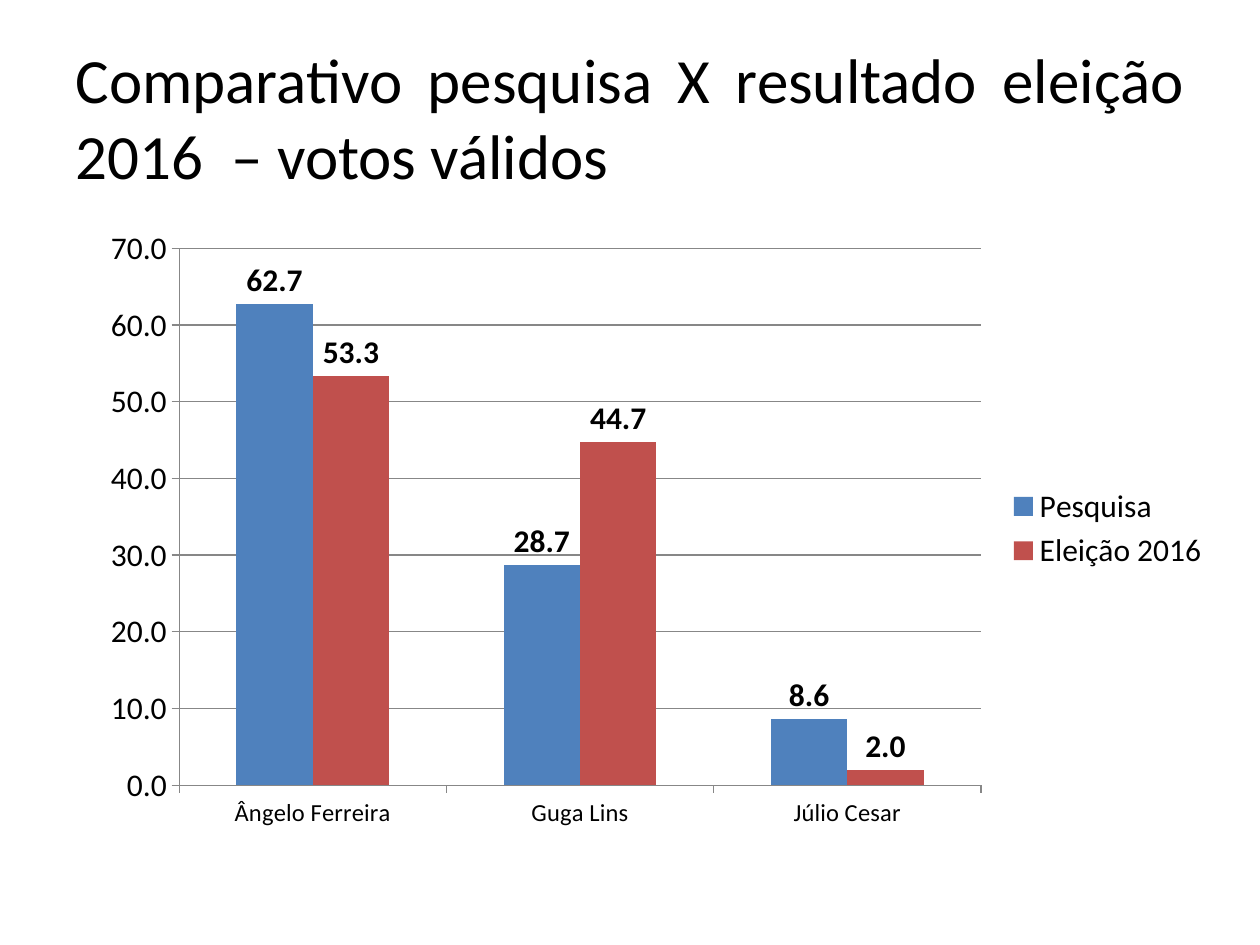
"""Build a slide comparing poll figures with the 2016 election result."""
from dataclasses import dataclass

from pptx import Presentation
from pptx.chart.data import CategoryChartData as Data
from pptx.dml.color import RGBColor
from pptx.enum.chart import XL_CHART_TYPE as Kind
from pptx.enum.chart import XL_LABEL_POSITION as Spot
from pptx.enum.chart import XL_LEGEND_POSITION as Side
from pptx.enum.chart import XL_TICK_MARK as Tick
from pptx.enum.text import MSO_ANCHOR as Anchor
from pptx.enum.text import MSO_AUTO_SIZE as Fit
from pptx.enum.text import PP_ALIGN as Align
from pptx.util import Pt

FACE = "Calibri"
INK = "000000"
GRAY = "878787"
FORM = "0.0"


@dataclass
class Poll:
    name: str
    votes: tuple[float, ...]
    color: str


NAMES = ("Ângelo Ferreira", "Guga Lins", "Júlio Cesar")
POLLS = (
    Poll("Pesquisa", (62.7, 28.7, 8.6), "4F81BD"),
    Poll("Eleição 2016", (53.3, 44.7, 2.0), "C0504D"),
)


def rgb(code: str) -> RGBColor:
    return RGBColor.from_string(code)


def style(font, size: float, bold: bool = False, color: str = INK) -> None:
    font.name, font.size, font.bold = FACE, Pt(size), bold
    font.color.rgb = rgb(color)


def write(shape, text: str, *, size: float, align=Align.LEFT, anchor=Anchor.MIDDLE) -> None:
    frame = shape.text_frame
    frame.word_wrap, frame.auto_size = True, Fit.NONE
    frame.vertical_anchor = anchor
    par = frame.paragraphs[0]
    par.alignment = align
    run = par.add_run()
    run.text = text
    style(run.font, size)


def stroke(line) -> None:
    line.color.rgb = rgb(GRAY)
    line.width = Pt(0.75)


def set_axis(axis, size: float) -> None:
    axis.major_tick_mark, axis.minor_tick_mark = Tick.OUTSIDE, Tick.NONE
    stroke(axis.format.line)
    style(axis.tick_labels.font, size)


def paint(bars, poll: Poll) -> None:
    bars.format.fill.solid()
    bars.format.fill.fore_color.rgb = rgb(poll.color)
    bars.invert_if_negative = False
    labels = bars.data_labels
    labels.show_value = True
    labels.number_format, labels.number_format_is_linked = FORM, False
    labels.position = Spot.OUTSIDE_END
    style(labels.font, 18, bold=True)


def add_bars(slide) -> None:
    data = Data(number_format=FORM)
    data.categories = NAMES
    for poll in POLLS:
        data.add_series(poll.name, poll.votes)
    chart = slide.shapes.add_chart(
        Kind.COLUMN_CLUSTERED, Pt(50.4), Pt(123.84), Pt(648), Pt(356.4), data
    ).chart
    style(chart.font, 18)
    chart.has_title = False
    chart.has_legend = True
    chart.legend.position = Side.RIGHT
    chart.legend.include_in_layout = False
    style(chart.legend.font, 18)
    set_axis(chart.category_axis, 14)
    scale = chart.value_axis
    set_axis(scale, 18)
    scale.minimum_scale, scale.maximum_scale, scale.major_unit = 0, 70, 10
    scale.tick_labels.number_format = FORM
    scale.tick_labels.number_format_is_linked = False
    scale.has_major_gridlines = True
    stroke(scale.major_gridlines.format.line)
    plot = chart.plots[0]
    plot.gap_width, plot.overlap, plot.vary_by_categories = 150, 0, False
    for bars, poll in zip(plot.series, POLLS):
        paint(bars, poll)


def main() -> None:
    deck = Presentation()
    deck.slide_width, deck.slide_height = Pt(720), Pt(540)
    slide = deck.slides.add_slide(deck.slide_layouts[5])
    title = slide.shapes.title
    title.left, title.top, title.width, title.height = Pt(36), Pt(21.6), Pt(648), Pt(90)
    write(title, "Comparativo pesquisa X resultado eleição 2016  – votos válidos",
          size=36, align=Align.JUSTIFY)
    add_bars(slide)
    deck.save("out.pptx")


if __name__ == "__main__":
    main()
